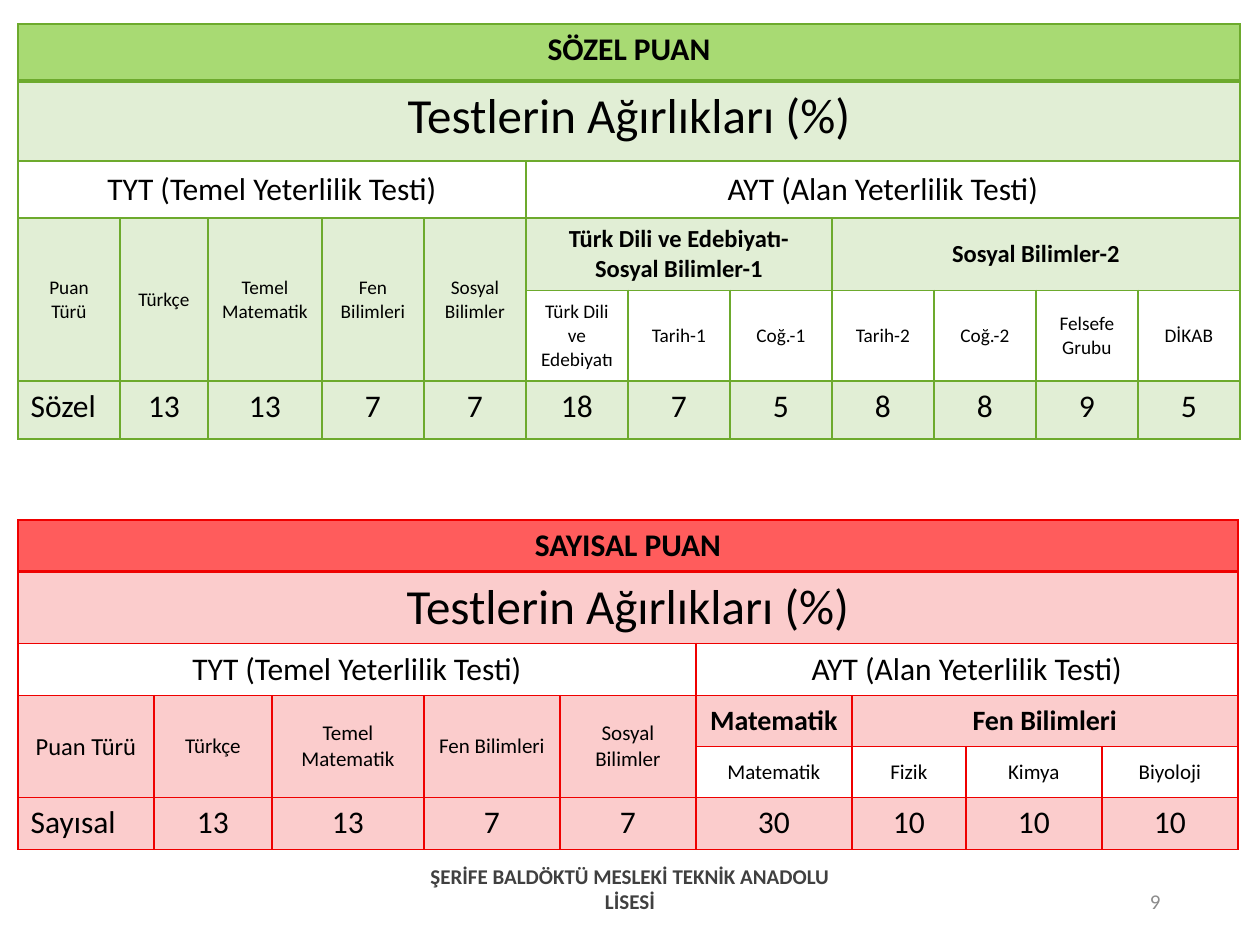
"""Build a slide with two tables of exam score weights."""
from lxml import etree
from pptx import Presentation
from pptx.dml.color import RGBColor
from pptx.enum.text import MSO_ANCHOR, PP_ALIGN
from pptx.oxml.ns import qn
from pptx.util import Emu, Pt

LEFT, MID, RIGHT = PP_ALIGN.LEFT, PP_ALIGN.CENTER, PP_ALIGN.RIGHT
TOP, CENTER = MSO_ANCHOR.TOP, MSO_ANCHOR.MIDDLE
BLACK = RGBColor(0x00, 0x00, 0x00)
DARK = RGBColor(0x40, 0x40, 0x40)
GREY = RGBColor(0x8C, 0x8C, 0x8C)
GREEN = RGBColor(0x6D, 0xAA, 0x2D)
LIME = RGBColor(0xA8, 0xDA, 0x73)
RED = RGBColor(0xEF, 0x00, 0x00)
CORAL = RGBColor(0xFF, 0x5C, 0x5C)
SCALE = 914400 / 126


def px(n):
    return Emu(round(n * SCALE))


def write(frame, text, size=18, bold=False, color=BLACK, align=MID):
    frame.word_wrap = True
    para = frame.paragraphs[0]
    para.alignment = align
    run = para.add_run()
    run.text = text
    font = run.font
    font.name, font.size, font.bold = "Calibri", Pt(size), bold
    font.color.rgb = color


SPECS = [
    dict(title="SÖZEL PUAN", line=GREEN, head=LIME, top=24,
         cols=[102, 88, 114] + [102] * 9, rows=[57, 80, 57, 72, 91, 58],
         tests=["Puan Türü", "Türkçe", "Temel Matematik", "Fen Bilimleri", "Sosyal Bilimler"],
         groups=[("Türk Dili ve Edebiyatı- Sosyal Bilimler-1", 3), ("Sosyal Bilimler-2", 4)],
         parts=["Türk Dili ve Edebiyatı", "Tarih-1", "Coğ.-1", "Tarih-2", "Coğ.-2",
                "Felsefe Grubu", "DİKAB"],
         scores=["Sözel", 13, 13, 7, 7, 18, 7, 5, 8, 8, 9, 5],
         first=11, small=11, large=14),
    dict(title="SAYISAL PUAN", line=RED, head=CORAL, top=520,
         cols=[136, 118, 152, 136, 136, 156, 114, 136, 136], rows=[51, 72, 52, 51, 51, 52],
         tests=["Puan Türü", "Türkçe", "Temel Matematik", "Fen Bilimleri", "Sosyal Bilimler"],
         groups=[("Matematik", 1), ("Fen Bilimleri", 3)],
         parts=["Matematik", "Fizik", "Kimya", "Biyoloji"],
         scores=["Sayısal", 13, 13, 7, 7, 30, 10, 10, 10],
         first=14, small=12, large=16),
]

prs = Presentation()
prs.slide_width, prs.slide_height = px(1260), px(945)
slide = prs.slides.add_slide(prs.slide_layouts[6])

for spec in SPECS:
    cols, rows, line = spec["cols"], spec["rows"], spec["line"]
    count, split = len(cols), len(spec["tests"])
    small = spec["small"]
    table = slide.shapes.add_table(len(rows), count, px(18), px(spec["top"]),
                                   px(sum(cols)), px(sum(rows))).table
    table.first_row = table.horz_banding = False
    for col, width in zip(table.columns, cols):
        col.width = px(width)
    for row, height in zip(table.rows, rows):
        row.height = px(height)

    cells = [
        (0, 0, 1, count, spec["title"], 18, True),
        (1, 0, 1, count, "Testlerin Ağırlıkları (%)", 28, False),
        (2, 0, 1, split, "TYT (Temel Yeterlilik Testi)", 18, False),
        (2, split, 1, count - split, "AYT (Alan Yeterlilik Testi)", 18, False),
    ]
    for c, name in enumerate(spec["tests"]):
        cells.append((3, c, 2, 1, name, small if c else spec["first"], False))
    start = split
    for name, span in spec["groups"]:
        cells.append((3, start, 1, span, name, spec["large"], True))
        start += span
    for c, name in enumerate(spec["parts"], split):
        cells.append((4, c, 1, 1, name, small, False))
    for c, score in enumerate(spec["scores"]):
        cells.append((5, c, 1, 1, str(score), 18, False))

    for r, c, high, wide, text, size, bold in cells:
        cell = table.cell(r, c)
        if high * wide > 1:
            cell.merge(table.cell(r + high - 1, c + wide - 1))
        cell.vertical_anchor = CENTER if r in (2, 3, 4) else TOP
        write(cell.text_frame, text, size=size, bold=bold,
              align=LEFT if (r, c) == (5, 0) else MID)

    for r in range(len(rows)):
        for c in range(count):
            cell = table.cell(r, c)
            props = cell._tc.get_or_add_tcPr()
            if r == 2 or (r == 4 and c >= split):
                cell.fill.background()
            else:
                cell.fill.solid()
                cell.fill.fore_color.rgb = line if r else spec["head"]
                if r:
                    tint = props.find(".//" + qn("a:srgbClr"))
                    etree.SubElement(tint, qn("a:alpha"), val="20000")
            for i, side in enumerate("LRTB"):
                thick = (r, side) in ((0, "B"), (1, "T"))
                edge = etree.Element(qn("a:ln" + side), w=str(Pt(2 if thick else 1)))
                paint = etree.SubElement(edge, qn("a:solidFill"))
                etree.SubElement(paint, qn("a:srgbClr"), val=str(line))
                props.insert(i, edge)

NOTES = [
    (417, 864, 426, "ŞERİFE BALDÖKTÜ MESLEKİ TEKNİK ANADOLU LİSESİ", True, DARK, MID),
    (890, 876, 283, "9", False, GREY, RIGHT),
]
for x, y, width, text, bold, color, align in NOTES:
    frame = slide.shapes.add_textbox(px(x), px(y), px(width), px(50)).text_frame
    frame.vertical_anchor = CENTER
    write(frame, text, size=12, bold=bold, color=color, align=align)

prs.save("out.pptx")
